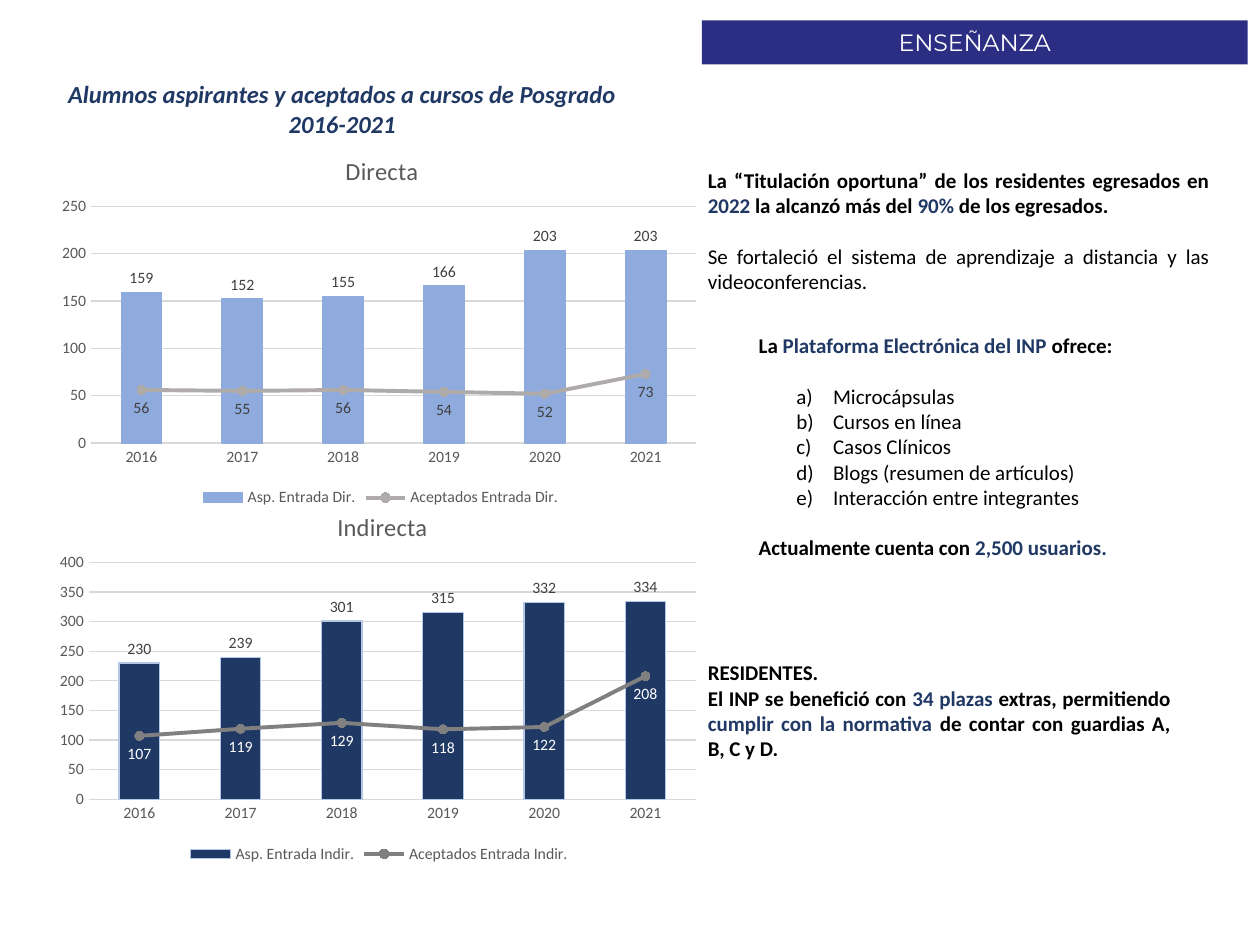
from dataclasses import dataclass
from lxml.etree import SubElement
from pptx import Presentation
from pptx.chart.data import CategoryChartData
from pptx.dml.color import RGBColor
from pptx.enum.chart import XL_CHART_TYPE, XL_LABEL_POSITION, XL_LEGEND_POSITION, XL_MARKER_STYLE, XL_TICK_MARK
from pptx.enum.shapes import MSO_SHAPE
from pptx.enum.text import MSO_ANCHOR, MSO_AUTO_SIZE, PP_ALIGN
from pptx.oxml import parse_xml
from pptx.oxml.ns import nsdecls, qn
from pptx.util import Cm, Pt


@dataclass(frozen=True)
class Theme:
    font: str = "Calibri"
    banner_font: str = "Montserrat"
    navy: str = "203864"
    banner: str = "2C2E83"
    black: str = "000000"
    white: str = "FFFFFF"
    axis: str = "595959"
    label: str = "404040"
    grid: str = "D9D9D9"
    sky: str = "8FAADC"
    pale: str = "B4C7E7"
    silver: str = "AFABAB"
    gray: str = "808080"
    banner_size: float = 13.5
    heading_size: float = 14
    body_size: float = 12
    chart_size: float = 9
    gap: float = 14.6


T = Theme()
YEARS = ["2016", "2017", "2018", "2019", "2020", "2021"]


def rgb(color):
    return RGBColor.from_string(color)


def style(font, size, color, name=T.font, bold=False, italic=False):
    font.name, font.size, font.bold, font.italic = name, Pt(size), bold, italic
    font.color.rgb = rgb(color)


def write(tf, text, size=T.body_size, color=T.black, accent=T.navy, font=T.font,
          bold=False, italic=False, align=PP_ALIGN.LEFT, before=0, lettered=False):
    p = tf.paragraphs[0]
    if p.runs:
        p = tf.add_paragraph()
    p.alignment, p.space_before = align, Pt(before)
    pPr = p._p.get_or_add_pPr()
    pPr.set("marL", str(int(Cm(1.5)) if lettered else 0))
    pPr.set("indent", str(int(Cm(-0.74)) if lettered else 0))
    if lettered:
        SubElement(pPr, qn("a:buFont"), typeface="+mj-lt")
        SubElement(pPr, qn("a:buAutoNum"), type="alphaLcParenR")
    else:
        SubElement(pPr, qn("a:buNone"))
    for i, part in enumerate(text.split("|")):
        if part:
            r = p.add_run()
            r.text = part
            style(r.font, size, accent if i % 2 else color, font, bold, italic)


def place(sp, box, anchor=MSO_ANCHOR.TOP):
    sp.left, sp.top, sp.width, sp.height = (Cm(v) for v in box)
    tf = sp.text_frame
    tf.word_wrap, tf.auto_size, tf.vertical_anchor = True, MSO_AUTO_SIZE.NONE, anchor
    return tf


def add_text_box(s, box):
    return place(s.shapes.add_textbox(*(Cm(v) for v in box)), box)


def set_layout(parent, index, **values):
    for old in parent.findall(qn("c:layout")):
        parent.remove(old)
    layout = parse_xml(f"<c:layout {nsdecls('c')}><c:manualLayout/></c:layout>")
    for tag, value in values.items():
        SubElement(layout[0], qn(f"c:{tag}"), val=str(value))
    parent.insert(index, layout)


def move_last_series_to_line(chart):
    bar = chart.plots[0]._element
    ser = bar.findall(qn("c:ser"))[-1]
    bar.remove(ser)
    for flag in ser.findall(qn("c:invertIfNegative")):
        ser.remove(flag)
    line = parse_xml(f'<c:lineChart {nsdecls("c")}><c:grouping val="stacked"/>'
                     '<c:varyColors val="0"/></c:lineChart>')
    line.append(ser)
    SubElement(line, qn("c:marker"), val="1")
    for axis in bar.findall(qn("c:axId")):
        SubElement(line, qn("c:axId"), val=axis.get("val"))
    bar.addnext(line)


def add_labels(series, position, color):
    labels = series.data_labels
    labels.show_value, labels.position = True, position
    style(labels.font, T.chart_size, color)


def format_axes(chart, top):
    for axis in (chart.category_axis, chart.value_axis):
        axis.major_tick_mark = axis.minor_tick_mark = XL_TICK_MARK.NONE
        style(axis.tick_labels.font, T.chart_size, T.axis)
    grid = chart.value_axis.major_gridlines.format.line
    for line in (chart.category_axis.format.line, grid):
        line.color.rgb, line.width = rgb(T.grid), Pt(0.75)
    axis = chart.value_axis
    axis.minimum_scale, axis.maximum_scale, axis.major_unit = 0, top, 50
    axis.format.line.fill.background()


def add_admissions_chart(s, box, title, suffix, applicants, accepted, top,
                         bar_color, edge_color, line_color, line_label, title_x):
    data = CategoryChartData()
    data.categories = YEARS
    data.add_series(f"Asp. Entrada {suffix}", applicants)
    data.add_series(f"Aceptados Entrada {suffix}", accepted)
    chart = s.shapes.add_chart(XL_CHART_TYPE.COLUMN_CLUSTERED, *(Cm(v) for v in box), data).chart
    style(chart.font, 10, T.black)
    move_last_series_to_line(chart)
    format_axes(chart, top)

    columns, trend = chart.plots
    columns.gap_width, columns.vary_by_categories = 150, False
    bars, line = columns.series[0], trend.series[0]
    bars.format.fill.solid()
    bars.format.fill.fore_color.rgb = rgb(bar_color)
    bars.format.line.color.rgb, bars.format.line.width = rgb(edge_color), Pt(0.75)
    add_labels(bars, XL_LABEL_POSITION.OUTSIDE_END, T.label)
    line.smooth = False
    line.format.line.color.rgb, line.format.line.width = rgb(line_color), Pt(2.25)
    line.marker.style, line.marker.size = XL_MARKER_STYLE.CIRCLE, 5
    line.marker.format.fill.solid()
    line.marker.format.fill.fore_color.rgb = rgb(line_color)
    line.marker.format.line.color.rgb = rgb(line_color)
    add_labels(line, XL_LABEL_POSITION.BELOW, line_label)

    chart.has_legend = True
    chart.legend.position, chart.legend.include_in_layout = XL_LEGEND_POSITION.BOTTOM, False
    style(chart.legend.font, T.chart_size, T.axis)
    chart.has_title = True
    write(chart.chart_title.text_frame, title, size=T.heading_size, color=T.axis,
          align=PP_ALIGN.CENTER)
    set_layout(chart.chart_title._element, 1, xMode="edge", yMode="edge", x=title_x, y=0.05)
    set_layout(columns._element.getparent(), 0, layoutTarget="inner", xMode="edge",
               yMode="edge", x=0.06, y=0.2, w=0.92, h=0.62)


def add_banner(s, box):
    sp = s.shapes.title
    sp.fill.solid()
    sp.fill.fore_color.rgb = rgb(T.banner)
    write(place(sp, box, MSO_ANCHOR.MIDDLE), "ENSEÑANZA", size=T.banner_size,
          color=T.white, font=T.banner_font, align=PP_ALIGN.CENTER)


def add_heading(s, box):
    sp = s.shapes.add_shape(MSO_SHAPE.ROUNDED_RECTANGLE, *(Cm(v) for v in box))
    sp.adjustments[0] = 0.32
    sp.shadow.inherit = False
    sp.fill.background()
    sp.line.fill.background()
    tf = place(sp, box, MSO_ANCHOR.MIDDLE)
    for text in ("Alumnos aspirantes y aceptados a cursos de Posgrado", "2016-2021"):
        write(tf, text, size=T.heading_size, color=T.navy, bold=True, italic=True,
              align=PP_ALIGN.CENTER)


def add_degrees(s, box):
    tf = add_text_box(s, box)
    write(tf, "La “Titulación oportuna” de los residentes egresados en |2022| la alcanzó "
          "más del |90%| de los egresados.", bold=True, align=PP_ALIGN.JUSTIFY)
    write(tf, "Se fortaleció el sistema de aprendizaje a distancia y las videoconferencias.",
          align=PP_ALIGN.JUSTIFY, before=T.gap)


def add_platform(s, box):
    tf = place(s.placeholders[1], box)
    write(tf, "La |Plataforma Electrónica del INP| ofrece:", bold=True)
    offers = ("Microcápsulas", "Cursos en línea", "Casos Clínicos",
              "Blogs (resumen de artículos)", "Interacción entre integrantes")
    for i, offer in enumerate(offers):
        write(tf, offer, lettered=True, before=0 if i else T.gap)
    write(tf, "Actualmente cuenta con |2,500 usuarios.", bold=True, before=T.gap)


def add_residents(s, box):
    tf = add_text_box(s, box)
    for text in ("RESIDENTES.", "El INP se benefició con |34 plazas| extras, permitiendo "
                 "|cumplir con la normativa| de contar con guardias A, B, C y D."):
        write(tf, text, bold=True, align=PP_ALIGN.JUSTIFY)


def main():
    prs = Presentation()
    prs.slide_width, prs.slide_height = Cm(25.4), Cm(19.05)
    s = prs.slides.add_slide(prs.slide_layouts[1])
    add_heading(s, (0.46, 1.3, 12.88, 1.78))
    add_degrees(s, (14.02, 3.25, 10.62, 2.82))
    add_platform(s, (15.04, 6.58, 9.65, 4.88))
    add_residents(s, (14.02, 13.18, 9.83, 2.31))
    add_admissions_chart(s, (0.99, 9.8, 13.31, 7.7), "Indirecta", "Indir.",
                         (230, 239, 301, 315, 332, 334), (107, 119, 129, 118, 122, 208), 400,
                         T.navy, T.pale, T.gray, T.white, 0.43)
    add_admissions_chart(s, (1.04, 2.62, 13.26, 7.7), "Directa", "Dir.",
                         (159, 152, 155, 166, 203, 203), (56, 55, 56, 54, 52, 73), 250,
                         T.sky, T.sky, T.silver, T.label, 0.44)
    add_banner(s, (14.15, 0.41, 11, 0.89))
    prs.save("out.pptx")


if __name__ == "__main__":
    main()
